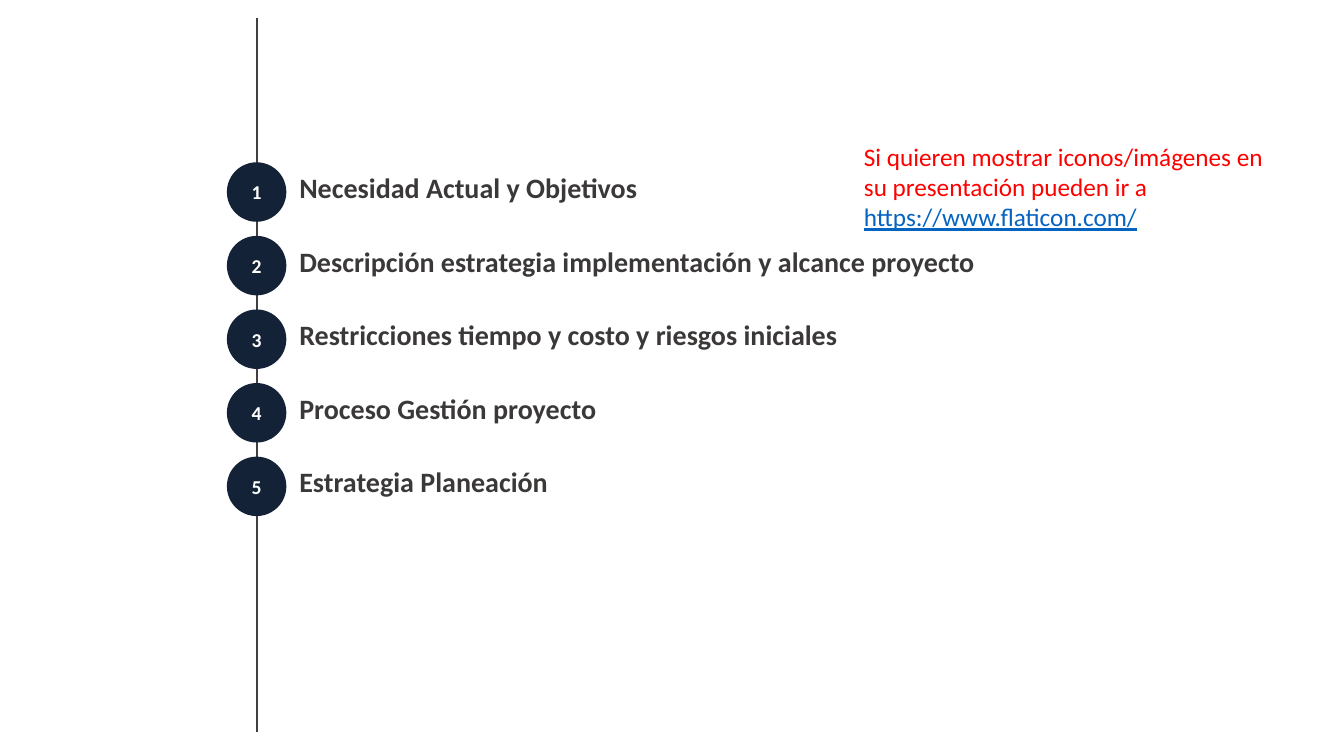
import dataclasses
import typing

import lxml.etree
import pptx
import pptx.dml.color
import pptx.enum.shapes
import pptx.enum.text
import pptx.oxml.ns
import pptx.util

EMU_PER_PX = 9144


@dataclasses.dataclass(frozen=True)
class Theme:
    font: str = "Calibri"
    line: str = "404040"
    circle: str = "132236"
    number: str = "FFFFFF"
    topic: str = "3B3838"
    note: str = "FF0000"
    address: str = "0563C1"
    number_size: int = 14
    topic_size: int = 20
    note_size: int = 18


@dataclasses.dataclass(frozen=True)
class Box:
    left: int
    top: int
    width: int
    height: int

    def emu(self) -> list[int]:
        return [px(length) for length in dataclasses.astuple(self)]


@dataclasses.dataclass(frozen=True)
class AgendaItem:
    number: int
    topic: str


THEME = Theme()
FIRST_TOP = 161
PITCH = 73
DIAMETER = 59
TOPICS = [
    "Necesidad Actual y Objetivos",
    "Descripción estrategia implementación y alcance proyecto",
    "Restricciones tiempo y costo y riesgos iniciales",
    "Proceso Gestión proyecto",
    "Estrategia Planeación",
]
ITEMS = [AgendaItem(number, topic) for number, topic in enumerate(TOPICS, 1)]


def px(length: int) -> int:
    return pptx.util.Emu(length * EMU_PER_PX)


def rgb(color: str) -> pptx.dml.color.RGBColor:
    return pptx.dml.color.RGBColor.from_string(color)


def apply(target: typing.Any, values: dict[str, typing.Any]) -> None:
    for name, value in values.items():
        setattr(target, name, value)


def add_run(paragraph: typing.Any, text: str, size: int, color: str, **extra: bool) -> None:
    run = paragraph.add_run()
    run.text = text
    apply(run.font, {"name": THEME.font, "size": pptx.util.Pt(size), **extra})
    run.font.color.rgb = rgb(color)


def add_timeline(slide: typing.Any) -> None:
    connector = slide.shapes.add_connector(
        pptx.enum.shapes.MSO_CONNECTOR.STRAIGHT, px(255), px(18), px(255), px(726)
    )
    connector.line.color.rgb = rgb(THEME.line)
    connector.line.width = pptx.util.Pt(1)
    properties = connector._element.spPr
    lxml.etree.SubElement(properties, pptx.oxml.ns.qn("a:effectLst"))


def add_item(slide: typing.Any, item: AgendaItem) -> None:
    top = FIRST_TOP + PITCH * (item.number - 1)
    group = slide.shapes.add_group_shape()

    topic = group.shapes.add_textbox(*Box(287, top + 7, 899, 43).emu())
    topic.text_frame.word_wrap = True
    paragraph = topic.text_frame.paragraphs[0]
    paragraph.line_spacing = 0.9
    add_run(paragraph, item.topic, THEME.topic_size, THEME.topic, bold=True)

    circle = group.shapes.add_shape(
        pptx.enum.shapes.MSO_SHAPE.OVAL, *Box(225, top, DIAMETER, DIAMETER).emu()
    )
    circle.shadow.inherit = False
    circle.fill.solid()
    circle.fill.fore_color.rgb = rgb(THEME.circle)
    circle.line.fill.background()
    circle.text_frame.vertical_anchor = pptx.enum.text.MSO_ANCHOR.MIDDLE
    paragraph = circle.text_frame.paragraphs[0]
    paragraph.alignment = pptx.enum.text.PP_ALIGN.CENTER
    add_run(paragraph, str(item.number), THEME.number_size, THEME.number, bold=True)


def add_note(slide: typing.Any) -> None:
    note = slide.shapes.add_textbox(*Box(847, 135, 442, 101).emu())
    apply(
        note.text_frame,
        {"word_wrap": True, "auto_size": pptx.enum.text.MSO_AUTO_SIZE.SHAPE_TO_FIT_TEXT},
    )
    paragraph = note.text_frame.paragraphs[0]
    add_run(
        paragraph,
        "Si quieren mostrar iconos/imágenes en su presentación pueden ir a ",
        THEME.note_size,
        THEME.note,
    )
    add_run(
        paragraph, "https://www.flaticon.com/", THEME.note_size, THEME.address, underline=True
    )


def main() -> None:
    presentation = pptx.Presentation()
    apply(presentation, {"slide_width": px(1333), "slide_height": px(750)})
    slide = presentation.slides.add_slide(presentation.slide_layouts[6])
    add_timeline(slide)
    for item in ITEMS:
        add_item(slide, item)
    add_note(slide)
    presentation.save("out.pptx")


if __name__ == "__main__":
    main()
